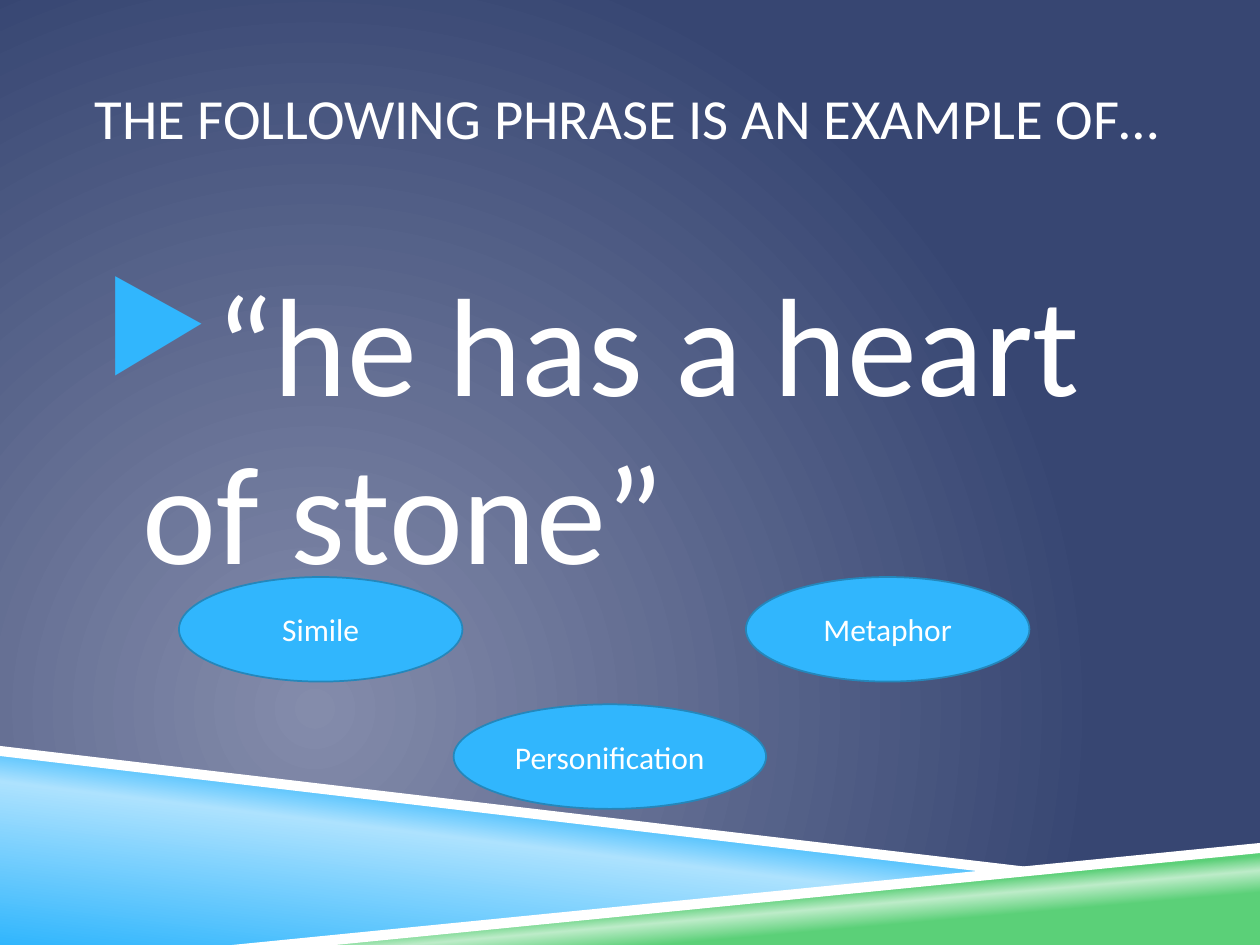
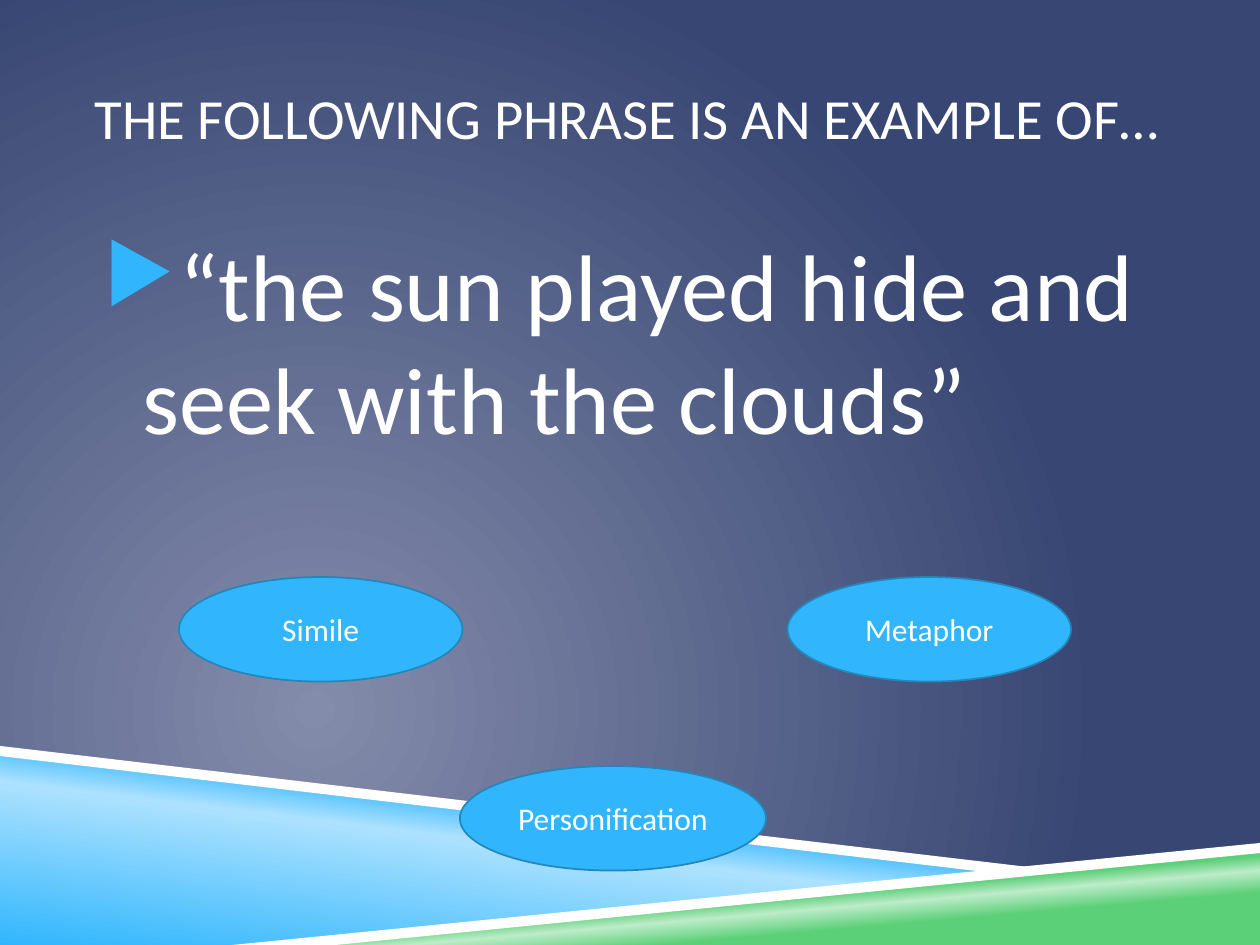
from lxml.etree import SubElement
from pptx import Presentation
from pptx.dml.color import RGBColor
from pptx.enum.shapes import MSO_SHAPE
from pptx.enum.text import MSO_ANCHOR as ANCHOR, PP_ALIGN as ALIGN
from pptx.oxml.ns import qn
from pptx.util import Pt

PX = 9144  # 100 px to the inch
FONT = "Calibri"
WHITE = RGBColor(0xFF, 0xFF, 0xFF)
BLUE = RGBColor(0x31, 0xB6, 0xFD)
PALE_BLUE = RGBColor(0xAD, 0xE2, 0xFE)
DARK_BLUE = RGBColor(0x24, 0x87, 0xBB)
GREEN = RGBColor(0x5B, 0xD0, 0x78)
PALE_GREEN = RGBColor(0xBD, 0xEC, 0xC9)
GREY_BLUE = RGBColor(0x84, 0x8C, 0xAB)
NAVY = RGBColor(0x37, 0x46, 0x72)


def write(shape, text, size, align=ALIGN.LEFT, anchor=ANCHOR.TOP, side=0, bullet=None):
    frame = shape.text_frame
    frame.word_wrap = True
    frame.vertical_anchor = anchor
    frame.margin_left = frame.margin_right = side * PX
    frame.margin_top = frame.margin_bottom = 5 * PX
    line = frame.paragraphs[0]
    line.alignment = align
    if bullet:
        props = line._p.get_or_add_pPr()
        props.set("marL", str(38 * PX))
        props.set("indent", str(-30 * PX))
        SubElement(SubElement(props, qn("a:buClr")), qn("a:srgbClr"), val=str(BLUE))
        SubElement(props, qn("a:buSzPct"), val="85000")
        SubElement(props, qn("a:buChar"), char=bullet)
    run = line.add_run()
    run.text = text
    run.font.name = FONT
    run.font.size = Pt(size)
    run.font.color.rgb = WHITE


def blend(fill, stops, angle=None):
    """Linear gradient at an angle, or a radial one centred low on the left."""
    fill.gradient()
    gradient = fill._xPr.find(qn("a:gradFill"))
    for child in list(gradient):
        gradient.remove(child)
    stop_list = SubElement(gradient, qn("a:gsLst"))
    for percent, color in stops:
        stop = SubElement(stop_list, qn("a:gs"), pos=str(percent * 1000))
        SubElement(stop, qn("a:srgbClr"), val=str(color))
    if angle is None:
        circle = SubElement(gradient, qn("a:path"), path="circle")
        SubElement(circle, qn("a:fillToRect"), l="50000", t="100000", r="100000", b="50000")
    else:
        SubElement(gradient, qn("a:lin"), ang=str(angle * 60000), scaled="0")


# Shared look: corner points, gradient stops and angle of each band
BANDS = [
    ([(0, 597), (792, 692), (200, 750), (0, 750)],
     [(0, BLUE), (52, PALE_BLUE), (66, BLUE)], 277),
    ([(198, 750), (1000, 672), (1000, 750)],
     [(28, GREEN), (40, PALE_GREEN), (48, GREEN)], 265),
    ([(0, 592), (0, 600), (790, 693), (832, 690)], None, None),
    ([(1000, 669), (184, 750), (266, 750), (1000, 677)], None, None),
]
QUESTION = "THE FOLLOWING PHRASE IS AN EXAMPLE OF…"

# Phrase, its size and top, then answers as (text, left, top, width)
QUIZ = [
    ("“he has a heart of stone”", 80, 199,
     [("Simile", 142, 458, 225), ("Metaphor", 592, 458, 225),
      ("Personification", 360, 559, 248)]),
    ("“the sun played hide and seek with the clouds”", 54, 175,
     [("Simile", 142, 458, 225), ("Metaphor", 625, 458, 225),
      ("Personification", 365, 608, 243)]),
]

deck = Presentation()
deck.slide_width, deck.slide_height = 1000 * PX, 750 * PX

for phrase, phrase_size, phrase_top, answers in QUIZ:
    slide = deck.slides.add_slide(deck.slide_layouts[6])
    shapes = slide.shapes

    # Background and bands
    blend(slide.background.fill, [(0, GREY_BLUE), (100, NAVY)])
    for corners, stops, angle in BANDS:
        outline = shapes.build_freeform(*corners[0], scale=PX)
        outline.add_line_segments(corners[1:], close=True)
        band = outline.convert_to_shape()
        band.shadow.inherit = False
        band.line.fill.background()
        if stops:
            blend(band.fill, stops, angle)
        else:
            band.fill.solid()
            band.fill.fore_color.rgb = WHITE

    # Question and phrase
    title = shapes.add_textbox(75 * PX, 30 * PX, 850 * PX, 125 * PX)
    write(title, QUESTION, 32.4, anchor=ANCHOR.MIDDLE)
    body = shapes.add_textbox(75 * PX, phrase_top * PX, 850 * PX, 408 * PX)
    write(body, phrase, phrase_size, bullet="▶")

    # Answers
    for answer, left, top, width in answers:
        oval = shapes.add_shape(MSO_SHAPE.OVAL, left * PX, top * PX, width * PX, 83 * PX)
        oval.shadow.inherit = False
        oval.fill.solid()
        oval.fill.fore_color.rgb = BLUE
        oval.line.color.rgb = DARK_BLUE
        oval.line.width = Pt(1)
        write(oval, answer, 18, align=ALIGN.CENTER, anchor=ANCHOR.MIDDLE, side=10)

deck.save("out.pptx")
